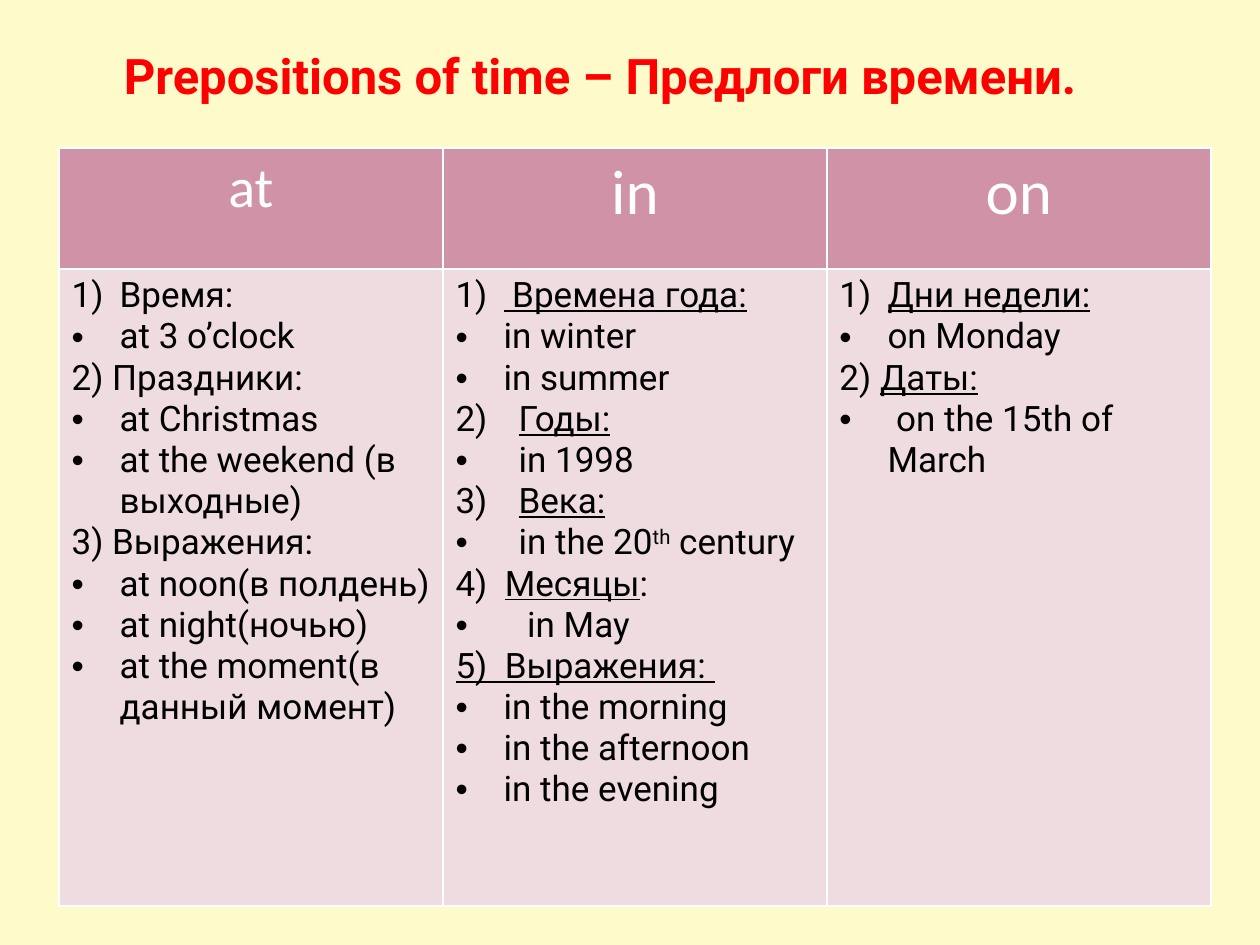
from dataclasses import dataclass

from lxml.etree import SubElement
from pptx import Presentation
from pptx.dml.color import RGBColor
from pptx.enum.text import MSO_ANCHOR as Anchor, MSO_AUTO_SIZE as AutoSize, PP_ALIGN as Align
from pptx.oxml import parse_xml
from pptx.oxml.ns import nsdecls, qn
from pptx.util import Emu, Pt

PX_PER_INCH = 126
BACKGROUND, TITLE_RED = "FEFAC9", "FF0000"
HEADER_FILL, BODY_FILL = "D092A7", "EEDCE1"
WHITE, BLACK = "FFFFFF", "000000"
HEADER_FONT, TEXT_FONT = "Calibri", "Roboto"
NARROW, WIDE = 48, 63
BULLET = "•"


@dataclass(frozen=True)
class Piece:
    text: str
    underline: bool = False
    superscript: bool = False


@dataclass(frozen=True)
class Line:
    """One paragraph; number is the automatic list number, if it has one."""
    pieces: tuple[Piece, ...]
    bullet: bool = False
    number: int | None = None
    indent: int = NARROW


@dataclass(frozen=True)
class Column:
    heading: str
    heading_size: int
    lines: tuple[Line, ...]


def px(length: int) -> Emu:
    return Emu(round(length * 914400 / PX_PER_INCH))


def color(value: str) -> RGBColor:
    return RGBColor.from_string(value)


def plain(text: str) -> Line:
    return Line((Piece(text),))


def numbered(number: int, text: str, indent: int = NARROW, underline: bool = True) -> Line:
    return Line((Piece(text, underline),), number=number, indent=indent)


def bullets(*texts: str, indent: int = NARROW) -> tuple[Line, ...]:
    return tuple(Line((Piece(text),), bullet=True, indent=indent) for text in texts)


COLUMNS = (
    Column("at", 32, (
        numbered(1, "Время:", underline=False),
        *bullets("at 3 o’clock"),
        plain("2) Праздники:"),
        *bullets("at Christmas", "at the weekend (в выходные)"),
        plain("3) Выражения:"),
        *bullets("at noon(в полдень)", "at night(ночью)", "at the moment(в данный момент)"),
    )),
    Column("in", 36, (
        numbered(1, " Времена года:"),
        *bullets("in winter", "in summer"),
        numbered(2, "Годы:", WIDE),
        *bullets("in 1998", indent=WIDE),
        numbered(3, "Века:", WIDE),
        Line((Piece("in the 20"), Piece("th", superscript=True), Piece(" century")),
             bullet=True, indent=WIDE),
        Line((Piece("4)  "), Piece("Месяцы", underline=True), Piece(":")), indent=WIDE),
        *bullets(" in May", indent=WIDE),
        Line((Piece("5)  Выражения: ", underline=True),)),
        *bullets("in the morning", "in the afternoon", "in the evening"),
    )),
    Column("on", 36, (
        numbered(1, "Дни недели:"),
        *bullets("on Monday"),
        Line((Piece("2) "), Piece("Даты:", underline=True))),
        *bullets(" on the 15th of March"),
    )),
)


def style_run(span, font: str, size: int, fill: str, bold: bool = False) -> None:
    span.font.name = font
    span.font.size = Pt(size)
    span.font.bold = bold
    span.font.color.rgb = color(fill)


def style_cell(cell, fill: str) -> None:
    cell.fill.solid()
    cell.fill.fore_color.rgb = color(fill)
    properties = cell._tc.get_or_add_tcPr()
    for position, side in enumerate("LRTB"):
        properties.insert(position, parse_xml(
            f'<a:ln{side} {nsdecls("a")} w="{Pt(1)}"><a:solidFill>'
            f'<a:srgbClr val="{WHITE}"/></a:solidFill></a:ln{side}>'))


def set_marker(para, line: Line) -> None:
    properties = para._p.get_or_add_pPr()
    properties.set("marL", str(px(line.indent)))
    properties.set("indent", str(-px(line.indent)))
    if line.bullet:
        SubElement(properties, qn("a:buFont"), typeface="Arial")
        SubElement(properties, qn("a:buChar"), char=BULLET)
    elif line.number is not None:
        SubElement(properties, qn("a:buFont"), typeface="+mj-lt")
        SubElement(properties, qn("a:buAutoNum"), type="arabicParenR", startAt=str(line.number))
    else:
        SubElement(properties, qn("a:buNone"))


def write_line(para, line: Line) -> None:
    set_marker(para, line)
    for piece in line.pieces:
        span = para.add_run()
        span.text = piece.text
        style_run(span, TEXT_FONT, 20, BLACK)
        if piece.underline:
            span.font.underline = True
        if piece.superscript:
            span.font._element.set("baseline", "30000")


def write_heading(cell, column: Column) -> None:
    style_cell(cell, HEADER_FILL)
    para = cell.text_frame.paragraphs[0]
    para.text = column.heading
    para.alignment = Align.CENTER
    style_run(para.runs[0], HEADER_FONT, column.heading_size, WHITE)


def write_body(cell, lines: tuple[Line, ...]) -> None:
    style_cell(cell, BODY_FILL)
    frame = cell.text_frame
    for index, line in enumerate(lines):
        write_line(frame.add_paragraph() if index else frame.paragraphs[0], line)


def add_title(page) -> None:
    title = page.shapes.title
    title.left, title.top, title.width, title.height = px(0), px(39), px(1200), px(659)
    frame = title.text_frame
    frame.text = "Prepositions of time – Предлоги времени."
    frame.auto_size = AutoSize.NONE
    frame.vertical_anchor = Anchor.TOP
    para = frame.paragraphs[0]
    para.alignment = Align.CENTER
    para.space_before = Pt(5.6)
    style_run(para.runs[0], TEXT_FONT, 28, TITLE_RED, bold=True)


def add_prepositions(page) -> None:
    column_width, row_heights = 384, (121, 637)
    table = page.shapes.add_table(
        len(row_heights), len(COLUMNS), px(59), px(148),
        px(column_width * len(COLUMNS)), px(sum(row_heights))).table
    for row, height in zip(table.rows, row_heights):
        row.height = px(height)
    for index, column in enumerate(COLUMNS):
        table.columns[index].width = px(column_width)
        write_heading(table.cell(0, index), column)
        write_body(table.cell(1, index), column.lines)


def main() -> None:
    deck = Presentation()
    deck.slide_width, deck.slide_height = px(1260), px(945)
    page = deck.slides.add_slide(deck.slide_layouts.get_by_name("Title Only"))
    page.background.fill.solid()
    page.background.fill.fore_color.rgb = color(BACKGROUND)
    add_title(page)
    add_prepositions(page)
    deck.save("out.pptx")


if __name__ == "__main__":
    main()
